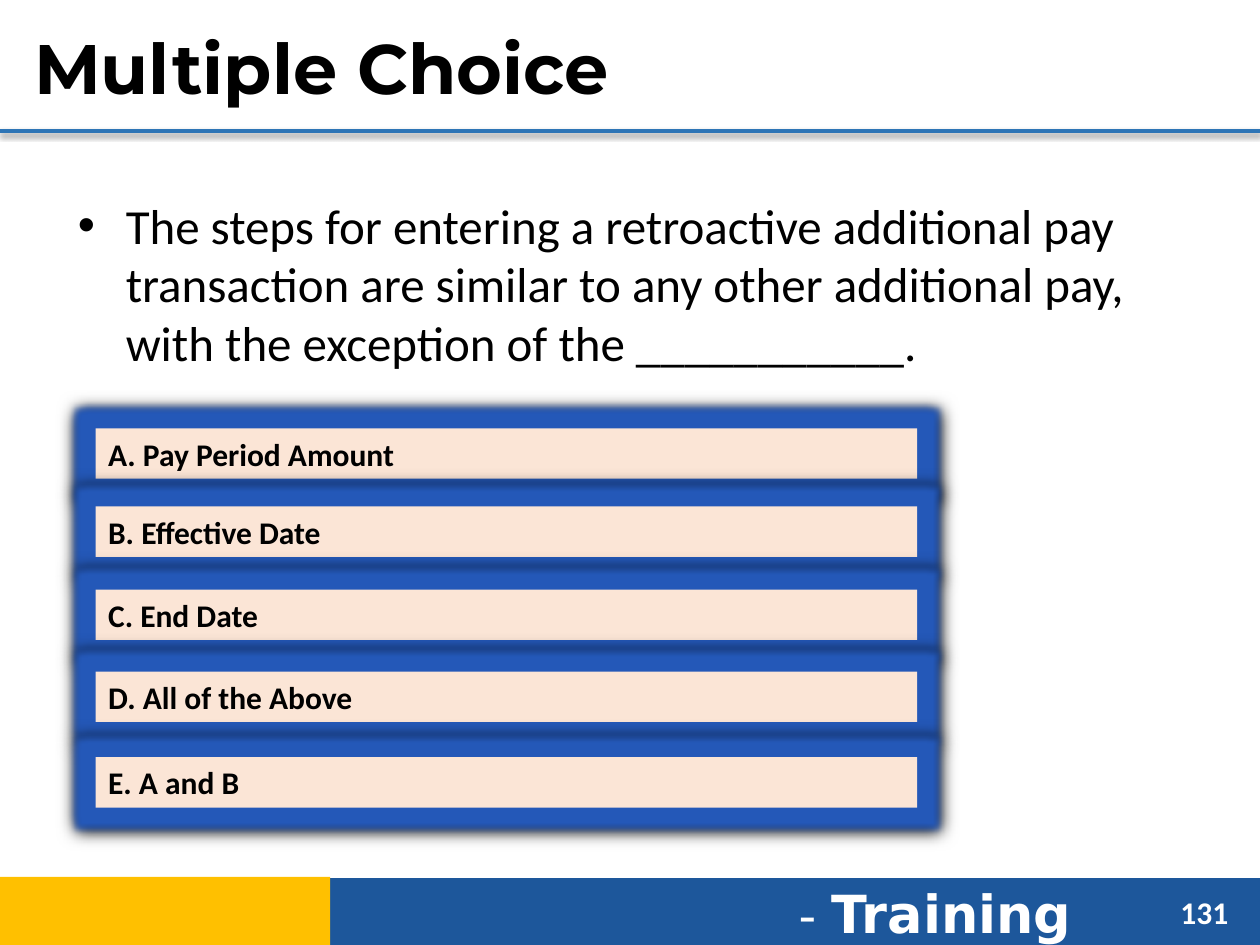
from lxml.etree import SubElement
from pptx import Presentation
from pptx.dml.color import RGBColor
from pptx.enum.shapes import MSO_CONNECTOR, MSO_SHAPE
from pptx.enum.text import MSO_ANCHOR, PP_ALIGN
from pptx.oxml.ns import qn
from pptx.util import Inches, Pt

TITLE = "Multiple Choice"
QUESTION = (
    "The steps for entering a retroactive additional pay transaction are similar "
    "to any other additional pay, with the exception of the ___________."
)
# Answer text and top edge in inches
ANSWERS = [
    ("A. Pay Period Amount", 3.4),
    ("B. Effective Date", 4.02),
    ("C. End Date", 4.68),
    ("D. All of the Above", 5.33),
    ("E. A and B", 6.01),
]
PAGE_NUMBER = "131"

THEME = {
    "ink": "000000", "white": "FFFFFF", "blue": "1D579B", "gold": "FFC000",
    "rule": "2E75B6", "answer": "FBE5D6", "glow": "2458B8",
    "heading_font": "Montserrat", "body_font": "Calibri", "footer_font": "DejaVu Sans",
    "title_size": 40, "question_size": 28, "answer_size": 18,
    "dash_size": 28, "footer_size": 30,
}


def add_span(para, text, font, size, color="ink", bold=False):
    span = para.add_run()
    span.text = text
    span.font.name = THEME[font]
    span.font.size = Pt(THEME[size])
    span.font.bold = bold
    span.font.color.rgb = RGBColor.from_string(THEME[color])


def add_bar(page, place, fill):
    bar = page.shapes.add_shape(MSO_SHAPE.RECTANGLE, *map(Inches, place))
    bar.shadow.inherit = False
    bar.fill.solid()
    bar.fill.fore_color.rgb = RGBColor.from_string(THEME[fill])
    bar.line.fill.background()
    return bar


def add_text_box(page, place):
    box = page.shapes.add_textbox(*map(Inches, place))
    box.text_frame.word_wrap = True
    return box.text_frame.paragraphs[0]


def add_color(parent, color, opacity):
    node = SubElement(parent, qn("a:srgbClr"), val=THEME[color])
    SubElement(node, qn("a:alpha"), val=str(opacity * 1000))


def add_effects(shape, blur, distance, opacity, glow=None):
    """Give a shape a downward shadow and, if asked, a glow of that radius in points."""
    properties = shape._element.spPr
    effects = properties.find(qn("a:effectLst"))
    if effects is None:
        effects = SubElement(properties, qn("a:effectLst"))
    if glow:
        halo = SubElement(effects, qn("a:glow"), rad=str(Pt(glow)))
        add_color(halo, "glow", 100)
    shadow = SubElement(
        effects, qn("a:outerShdw"), blurRad=str(Pt(blur)), dist=str(Pt(distance)),
        dir="5400000", rotWithShape="0",
    )
    add_color(shadow, "ink", opacity)


def add_frame(page):
    """Footer bars, footer text, page number and the rule below the title."""
    add_bar(page, (2.61, 6.97, 7.39, 0.55), "blue")
    para = add_text_box(page, (6.24, 6.94, 2.8, 0.61))
    add_span(para, "- ", "footer_font", "dash_size", "white")
    add_span(para, "Training", "footer_font", "footer_size", "white", True)

    rule = page.shapes.add_connector(
        MSO_CONNECTOR.STRAIGHT, 0, Inches(1.04), Inches(10), Inches(1.04))
    rule.line.color.rgb = RGBColor.from_string(THEME["rule"])
    rule.line.width = Pt(2.25)
    add_effects(rule, 3.1, 1.6, 38)

    para = add_text_box(page, (9.27, 7.04, 0.6, 0.4))
    add_span(para, PAGE_NUMBER, "body_font", "answer_size", "white", True)
    add_bar(page, (-0.01, 6.96, 2.63, 0.55), "gold")


def add_title(page):
    title = page.shapes.title
    title.left, title.top, title.width, title.height = map(Inches, (0.17, 0.06, 9, 0.93))
    title.text_frame.vertical_anchor = MSO_ANCHOR.MIDDLE
    para = title.text_frame.paragraphs[0]
    para.alignment = PP_ALIGN.LEFT
    add_span(para, TITLE, "heading_font", "title_size", bold=True)


def add_question(page):
    para = add_text_box(page, (0.52, 1.5, 8.94, 1.6))
    properties = para._p.get_or_add_pPr()
    properties.set("marL", str(Inches(0.38)))
    properties.set("indent", str(Inches(-0.38)))
    SubElement(properties, qn("a:buFont"), typeface="Arial")
    SubElement(properties, qn("a:buChar"), char="•")
    add_span(para, QUESTION, "body_font", "question_size")


def add_answer(page, text, top):
    bar = add_bar(page, (0.76, top, 6.52, 0.4), "answer")
    add_effects(bar, 8.5, 1, 100, glow=8)
    bar.text_frame.word_wrap = True
    bar.text_frame.vertical_anchor = MSO_ANCHOR.TOP
    para = bar.text_frame.paragraphs[0]
    para.alignment = PP_ALIGN.LEFT
    add_span(para, text, "body_font", "answer_size", bold=True)


def main():
    deck = Presentation()
    deck.slide_width, deck.slide_height = Inches(10), Inches(7.5)
    page = deck.slides.add_slide(deck.slide_layouts[5])
    add_frame(page)
    add_title(page)
    add_question(page)
    for text, top in ANSWERS:
        add_answer(page, text, top)
    deck.save("out.pptx")


if __name__ == "__main__":
    main()
